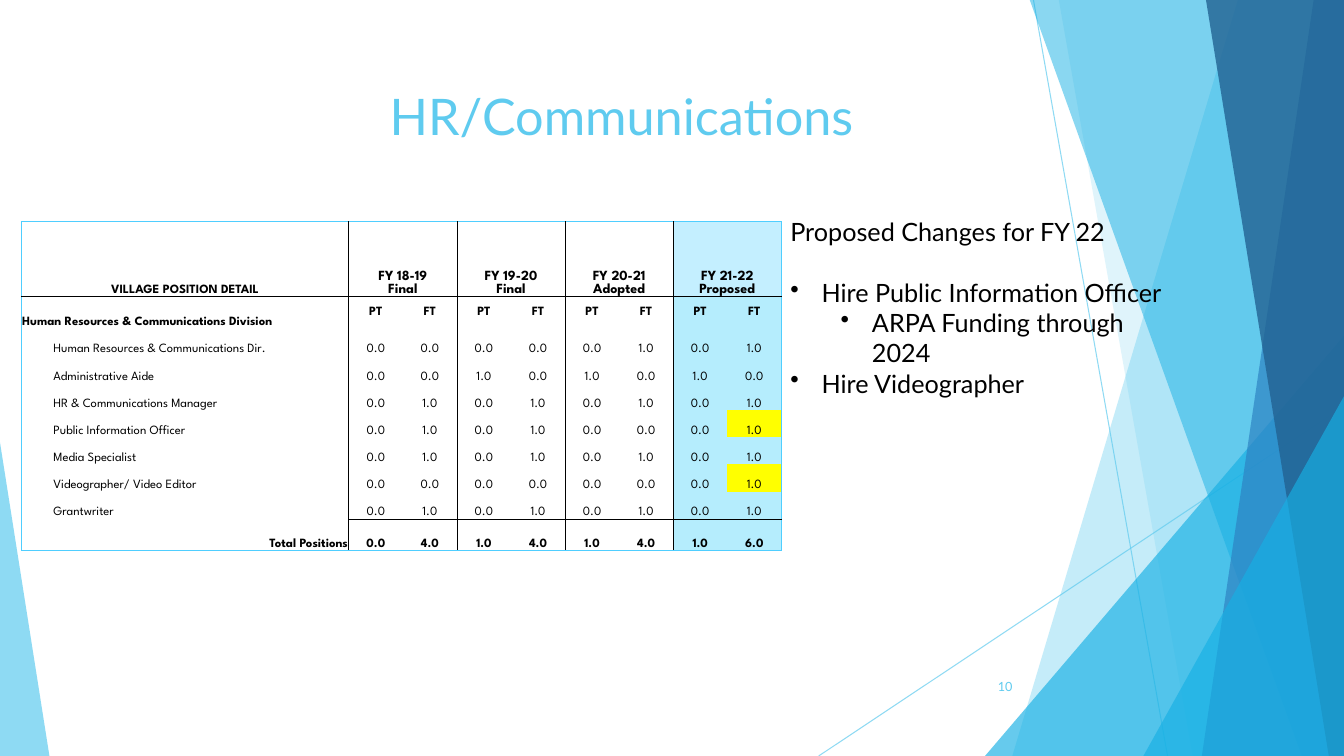
from itertools import accumulate

from pptx import Presentation
from pptx import util as u
from pptx.dml.color import RGBColor
from pptx.enum import shapes, text
from pptx.oxml.ns import qn
from lxml import etree

THEME = {
    "sky": "5FCBEF", "cyan": "17B0E4", "blue": "2E83C3", "navy": "226292",
    "black": "000000", "edge": "4FCEFF", "head": "C4EFFF", "tint": "B5EDFD",
    "mark": "FFFF00", "face": "Lato", "grid": "League Spartan",
    "title": 36, "body": 18, "year": 10, "cell": 9, "page": 9,
    "thin": 0.75, "rule": 0.5,
}
WIDE, HIGH = 13.33, 7.5

TITLE = "HR/Communications"
PAGE = "10"
LEAD = "Proposed Changes for FY 22"
NOTES = [
    ("Hire Public Information Officer", 0),
    ("ARPA Funding through 2024", 1),
    ("Hire Videographer", 0),
]
CORNER = "VILLAGE POSITION DETAIL"
YEARS = ["FY 18-19\vFinal", "FY 19-20\vFinal", "FY 20-21\vAdopted", "FY 21-22\vProposed"]
GROUP = "Human Resources & Communications Division"
STAFF = [
    ("Human Resources & Communications Dir.", "0.0 0.0 0.0 0.0 0.0 1.0 0.0 1.0"),
    ("Administrative Aide", "0.0 0.0 1.0 0.0 1.0 0.0 1.0 0.0"),
    ("HR & Communications Manager", "0.0 1.0 0.0 1.0 0.0 1.0 0.0 1.0"),
    ("Public Information Officer", "0.0 1.0 0.0 1.0 0.0 0.0 0.0 1.0"),
    ("Media Specialist", "0.0 1.0 0.0 1.0 0.0 1.0 0.0 1.0"),
    ("Videographer/ Video Editor", "0.0 0.0 0.0 0.0 0.0 0.0 0.0 1.0"),
    ("Grantwriter", "0.0 1.0 0.0 1.0 0.0 1.0 0.0 1.0"),
    ("Total Positions", "0.0 4.0 1.0 4.0 1.0 4.0 1.0 6.0"),
]
NEW = {"Public Information Officer", "Videographer/ Video Editor"}

RAYS = [((10.25, 0), (11.58, HIGH)), ((WIDE, 4.03), (8.12, HIGH))]
FACETS = [
    ("band", (12.28, 10.04), "sky", 36),
    ("band", (10.5, 11.83), "sky", 20),
    ("peak", (9.77, 3.33, 3.56, 4.17, 1), "cyan", 66),
    ("band", (10.21, 12.91), "cyan", 50),
    ("band", (13.03, 11.92), "blue", 70),
    ("band", (11.96, 13.18), "navy", 80),
    ("peak", (11.34, 3.93, 1.99, 3.57, 1), "cyan", 66),
    ("peak", (0, 4.39, 0.49, 3.11, 0), "sky", 70),
]

GRID = (0.21, 2.2, 7.54, 3.25)
STUB = [0.31, 2.94]
COLS = STUB + [(GRID[2] - sum(STUB)) / 8] * 8
ROWS = [0.74, 0.32] + [0.27] * 7 + [0.31]

deck = Presentation()
deck.slide_width, deck.slide_height = u.Inches(WIDE), u.Inches(HIGH)
slide = deck.slides.add_slide(deck.slide_layouts[6])


def inch(*sizes):
    return [u.Inches(size) for size in sizes]


def tone(name):
    return RGBColor.from_string(THEME[name])


def fade(part, share):
    color = next(part.iter(qn("a:srgbClr")))
    etree.SubElement(color, qn("a:alpha")).set("val", str(share * 1000))


def style(para, size, hue, face="face", bold=False, align=text.PP_ALIGN.LEFT):
    para.alignment = align
    font = para.font
    font.name, font.size, font.bold = THEME[face], u.Pt(THEME[size]), bold
    font.color.rgb = tone(hue)


def box(at, anchor=text.MSO_ANCHOR.TOP):
    frame = slide.shapes.add_textbox(*inch(*at)).text_frame
    frame.word_wrap = True
    frame.vertical_anchor = anchor
    return frame


def draw_ray(start, end):
    ray = slide.shapes.add_connector(shapes.MSO_CONNECTOR.STRAIGHT, *inch(*start, *end))
    ray.line.color.rgb, ray.line.width = tone("sky"), u.Pt(THEME["thin"])
    props = ray.line._get_or_add_ln()
    fade(props, 70)
    etree.SubElement(props.getparent(), qn("a:effectLst"))


def draw_facet(kind, place, hue, share):
    if kind == "band":
        top, foot = place
        pen = slide.shapes.build_freeform(*inch(top, -0.01))
        pen.add_line_segments([inch(*dot) for dot in ((WIDE, -0.01), (WIDE, HIGH), (foot, HIGH))])
        facet = pen.convert_to_shape()
    else:
        facet = slide.shapes.add_shape(shapes.MSO_SHAPE.ISOSCELES_TRIANGLE, *inch(*place[:4]))
        facet.adjustments[0] = place[4]
    facet.shadow.inherit = False
    facet.line.fill.background()
    facet.fill.solid()
    facet.fill.fore_color.rgb = tone(hue)
    fade(facet.fill._xPr, share)


def edge_hues(row, col):
    last = len(ROWS) - 1
    hues = {}
    if col == 0:
        hues["L"] = "edge"
    elif col > 1 and col % 2 == 0:
        hues["L"] = "black"
    if col == 9 or (row == 0 and col == 8):
        hues["R"] = "edge"
    elif col % 2 and (col > 1 or row in (1, last)):
        hues["R"] = "black"
    if row == 0:
        hues["T"] = "edge"
    elif row == 1 or (row == last and col > 1):
        hues["T"] = "black"
    if row == last:
        hues["B"] = "edge"
    elif row == 0 or (row == last - 1 and col > 1):
        hues["B"] = "black"
    return hues


def rule_cell(cell, hues):
    props = cell._tc.get_or_add_tcPr()
    for spot, side in enumerate("LRTB"):
        line = etree.Element(qn("a:ln" + side), w=str(u.Pt(THEME["rule"])))
        if side in hues:
            fill = etree.SubElement(line, qn("a:solidFill"))
            etree.SubElement(fill, qn("a:srgbClr"), val=THEME[hues[side]])
        else:
            etree.SubElement(line, qn("a:noFill"))
        props.insert(spot, line)


def fill_grid():
    table = slide.shapes.add_table(len(ROWS), len(COLS), *inch(*GRID)).table
    table.first_row = table.horz_banding = False
    for col, size in zip(table.columns, COLS):
        col.width = u.Inches(size)
    for row, size in zip(table.rows, ROWS):
        row.height = u.Inches(size)

    lines = [[CORNER, ""] + [part for year in YEARS for part in (year, "")],
             [GROUP, ""] + ["PT", "FT"] * len(YEARS)]
    lines += [["", name] + counts.split() for name, counts in STAFF]
    last = len(lines) - 1
    for r, line in enumerate(lines):
        for c, words in enumerate(line):
            cell = table.cell(r, c)
            cell.text = words
            cell.margin_left = cell.margin_right = cell.margin_top = u.Inches(0.01)
            cell.margin_bottom = 0
            middle = r == 1 and c > 1
            cell.vertical_anchor = text.MSO_ANCHOR.MIDDLE if middle else text.MSO_ANCHOR.BOTTOM
            align = text.PP_ALIGN.CENTER if r == 0 or c > 1 else text.PP_ALIGN.LEFT
            if r == last and c == 1:
                align = text.PP_ALIGN.RIGHT
            size = "year" if r == 0 and c > 1 else "cell"
            for para in cell.text_frame.paragraphs:
                style(para, size, "black", "grid", r in (0, 1, last), align)
            if c > 7:
                cell.fill.solid()
                hue = "head" if r == 0 else "mark" if c == 9 and line[1] in NEW else "tint"
                cell.fill.fore_color.rgb = tone(hue)
            else:
                cell.fill.background()
            rule_cell(cell, edge_hues(r, c))
    for c in range(0, len(COLS), 2):
        table.cell(0, c).merge(table.cell(0, c + 1))
    table.cell(1, 0).merge(table.cell(1, 1))


def write_notes():
    frame = box((7.74, 2.1, 4.09, 1.92))
    lead = frame.paragraphs[0]
    lead.text = LEAD
    style(lead, "body", "black")
    lead.space_after = u.Pt(THEME["body"] * 1.2)
    for words, level in NOTES:
        para = frame.add_paragraph()
        para.text, para.level = words, level
        style(para, "body", "black")
        props = para._p.get_or_add_pPr()
        props.set("marL", str(u.Inches(0.31 + level * 0.5)))
        props.set("indent", str(u.Inches(-0.31)))
        mark = etree.Element(qn("a:buChar"), char="•")
        props.find(qn("a:defRPr")).addprevious(mark)


for ray in RAYS:
    draw_ray(*ray)
for facet in FACETS:
    draw_facet(*facet)
head = box((1.2, 0.8, 9.93, 0.87)).paragraphs[0]
head.text = TITLE
style(head, "title", "sky", align=text.PP_ALIGN.CENTER)
page = box((9.39, 6.61, 0.75, 0.4), text.MSO_ANCHOR.MIDDLE).paragraphs[0]
page.text = PAGE
style(page, "page", "sky", align=text.PP_ALIGN.RIGHT)
write_notes()
fill_grid()
deck.save("out.pptx")
